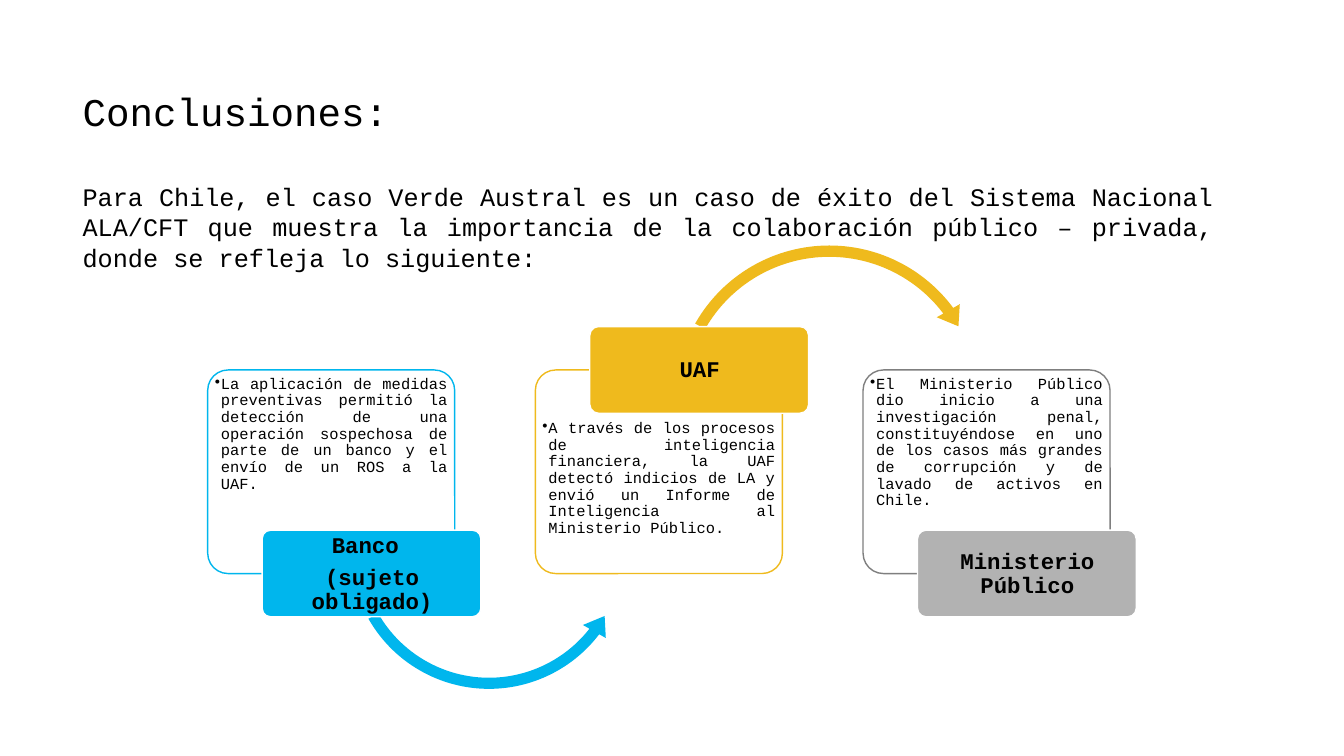
from lxml import etree
from pptx import Presentation
from pptx.dml.color import RGBColor
from pptx.enum import shapes, text
from pptx.oxml import ns
from pptx.util import Inches, Pt

TITLE = "Conclusiones:"
INTRO = ("Para Chile, el caso Verde Austral es un caso de éxito del Sistema Nacional ALA/CFT "
         "que muestra la importancia de la colaboración público – privada, "
         "donde se refleja lo siguiente:")
LEFT_ARROW = shapes.MSO_SHAPE.LEFT_CIRCULAR_ARROW
RIGHT_ARROW = shapes.MSO_SHAPE.CIRCULAR_ARROW
STEPS = [
    {"label": ["Banco ", "(sujeto obligado)"], "label_on_top": False,
     "fill": "00B6ED", "border": "00B6ED",
     "detail": "La aplicación de medidas preventivas permitió la detección de una operación "
               "sospechosa de parte de un banco y el envío de un ROS a la UAF.",
     "arrow": (LEFT_ARROW, (3.4, 4.01, 2.9, 2.9), (0.038, 4.815, 22.57, 90.245, 0.045))},
    {"label": ["UAF"], "label_on_top": True,
     "fill": "EFBA1D", "border": "EFBA1D",
     "detail": "A través de los procesos de inteligencia financiera, la UAF detectó indicios "
               "de LA y envió un Informe de Inteligencia al Ministerio Público.",
     "arrow": (RIGHT_ARROW, (6.62, 2.36, 3.21, 3.21), (0.035, 4.308, 193.937, 125.755, 0.041))},
    {"label": ["Ministerio Público"], "label_on_top": False,
     "fill": "B2B2B2", "border": "7F7F7F",
     "detail": "El Ministerio Público dio inicio a una investigación penal, constituyéndose en uno "
               "de los casos más grandes de corrupción y de lavado de activos en Chile.",
     "arrow": None},
]
FONT = "Courier New"
FIRST_LEFT, STEP_PITCH = 2.06, 3.25
CARD_TOP, CARD_WIDTH, CARD_HEIGHT = 3.67, 2.45, 2.02
LABEL_OFFSET, LABEL_WIDTH, LABEL_HEIGHT = 0.54, 2.17, 0.86


def color(value):
    return RGBColor.from_string(value)


def inches(area):
    return [Inches(length) for length in area]


def write(frame, lines, size, align, anchor=text.MSO_ANCHOR.TOP, bold=False,
          spacing=None, after=None, bullet=False):
    frame.word_wrap = True
    frame.vertical_anchor = anchor
    frame.text = "\n".join(lines)
    for para in frame.paragraphs:
        para.alignment = align
        para.line_spacing = spacing
        if after is not None:
            para.space_after = Pt(after)
        if bullet:
            props = para._p.get_or_add_pPr()
            props.set("marL", str(Inches(0.06)))
            props.set("indent", str(-Inches(0.06)))
            etree.SubElement(props, ns.qn("a:buChar")).set("char", "•")
        for span in para.runs:
            span.font.name = FONT
            span.font.size = Pt(size)
            span.font.bold = bold
            span.font.color.rgb = color("000000")


def add_text(slide, area, margins=None, **style):
    frame = slide.shapes.add_textbox(*inches(area)).text_frame
    if margins:
        frame.margin_left = frame.margin_right = Inches(margins[0])
        frame.margin_top = frame.margin_bottom = Inches(margins[1])
    write(frame, **style)
    return frame


def add_shape(slide, kind, area, adjustments, fill, border=None, opacity=None):
    shape = slide.shapes.add_shape(kind, *inches(area))
    shape.shadow.inherit = False
    for index, value in enumerate(adjustments):
        shape.adjustments[index] = value
    shape.fill.solid()
    shape.fill.fore_color.rgb = color(fill)
    if opacity:
        tone = shape._element.spPr.find(ns.qn("a:solidFill"))[0]
        etree.SubElement(tone, ns.qn("a:alpha")).set("val", str(opacity * 1000))
    if border:
        shape.line.color.rgb = color(border)
        shape.line.width = Pt(1)
    else:
        shape.line.fill.background()


def add_step(slide, step, left):
    rounded = shapes.MSO_SHAPE.ROUNDED_RECTANGLE
    on_top = step["label_on_top"]

    # Card with its explanation
    add_shape(slide, rounded, (left, CARD_TOP, CARD_WIDTH, CARD_HEIGHT), [0.1],
              "FFFFFF", step["border"], opacity=90)
    detail_top = CARD_TOP + (0.48 if on_top else 0.04)
    add_text(slide, (left + 0.05, detail_top, CARD_WIDTH - 0.1, 1.49), (0.02, 0.02),
             lines=[step["detail"]], size=11, align=text.PP_ALIGN.JUSTIFY,
             spacing=0.9, after=1.65, bullet=True)

    # Arrow to the next step
    if step["arrow"]:
        kind, area, adjustments = step["arrow"]
        add_shape(slide, kind, area, adjustments, step["fill"])

    # Label centred on the card's top or bottom edge
    label_left = left + LABEL_OFFSET
    label_top = CARD_TOP + (0 if on_top else CARD_HEIGHT) - LABEL_HEIGHT / 2
    add_shape(slide, rounded, (label_left, label_top, LABEL_WIDTH, LABEL_HEIGHT), [0.1],
              step["fill"], "FFFFFF")
    add_text(slide, (label_left + 0.03, label_top + 0.03, LABEL_WIDTH - 0.05, LABEL_HEIGHT - 0.05),
             (0.03, 0.02), lines=step["label"], size=16, align=text.PP_ALIGN.CENTER,
             anchor=text.MSO_ANCHOR.MIDDLE, bold=True, spacing=0.9, after=5.6)


def main():
    deck = Presentation()
    deck.slide_width, deck.slide_height = Inches(13.33), Inches(7.5)
    slide = deck.slides.add_slide(deck.slide_layouts[5])

    # Title and introduction
    title = slide.shapes.title
    title.left, title.top, title.width, title.height = inches((0.72, 0.55, 9.83, 1.16))
    write(title.text_frame, [TITLE], 28, text.PP_ALIGN.LEFT, text.MSO_ANCHOR.MIDDLE, spacing=0.9)
    intro = add_text(slide, (0.72, 1.75, 11.41, 0.71), lines=[INTRO], size=18,
                     align=text.PP_ALIGN.JUSTIFY)
    intro.auto_size = text.MSO_AUTO_SIZE.SHAPE_TO_FIT_TEXT

    # Three steps of the process
    for index, step in enumerate(STEPS):
        add_step(slide, step, FIRST_LEFT + index * STEP_PITCH)

    deck.save("out.pptx")


if __name__ == "__main__":
    main()
